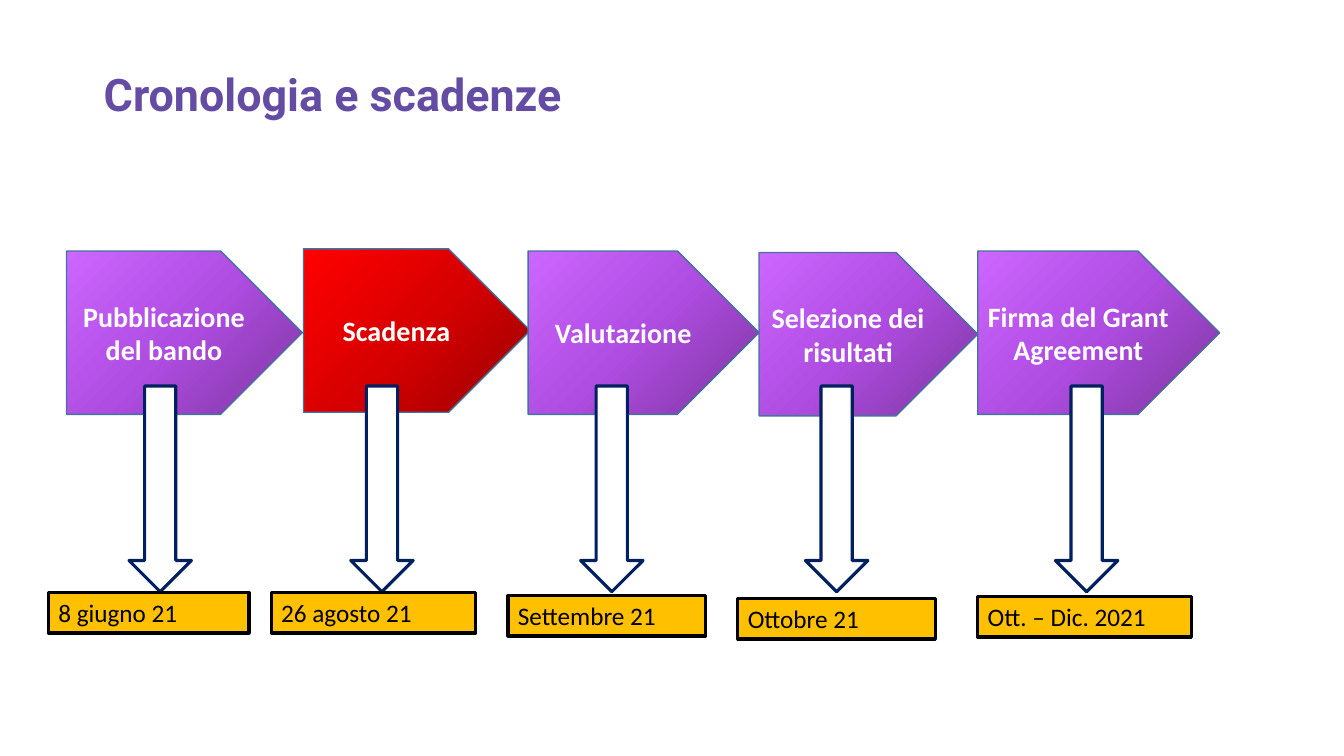
import copy

import pptx
import pptx.dml.color
import pptx.enum.shapes
import pptx.enum.text
import pptx.util

SHAPE = pptx.enum.shapes.MSO_SHAPE
ANCHOR = pptx.enum.text.MSO_ANCHOR
ALIGN = pptx.enum.text.PP_ALIGN
WIDTH, HEIGHT = pptx.util.Inches(13.33), pptx.util.Inches(7.5)
COLORS = {
    "title": "644BA4", "white": "FFFFFF", "black": "000000",
    "stage_line": "43739E", "arrow_line": "002060", "date": "FFC000",
}
GRADIENTS = {
    "purple": ("7B369E", "AF4CE1", "CC66FF"),
    "red": ("970000", "D70000", "FF0000"),
}
STAGE_HEIGHT, DATE_HEIGHT = 21.6, 5.33
ARROW_TOP, ARROW_WIDTH, ARROW_HEIGHT = 51.07, 4.65, 27.2
STAGES = [
    ("Pubblicazione del bando", "purple", (4.95, 33.2, 17.55)),
    ("Scadenza", "red", (22.58, 32.93, 16.88)),
    ("Valutazione", "purple", (39.3, 33.2, 17.18)),
    ("Selezione dei risultati", "purple", (56.48, 33.4, 16.28)),
    ("Firma del Grant Agreement", "purple", (72.75, 33.2, 18)),
]
DATES = [
    ("8 giugno 21", 9.6, (3.6, 78.4, 14.93)),
    ("26 agosto 21", 26.1, (20.18, 78.4, 15.23)),
    ("Settembre 21", 43.2, (37.8, 78.8, 14.7)),
    ("Ottobre 21", 59.93, (54.9, 79.2, 14.7)),
    ("Ott. – Dic. 2021", 78.53, (72.75, 78.93, 15.9)),
]


def rgb(value):
    """Return the colour of a hex string."""
    return pptx.dml.color.RGBColor.from_string(value)


def place(left, top, width, height):
    """Turn percentages of the slide into lengths."""
    return [round(share * side / 100) for share, side in
            ((left, WIDTH), (top, HEIGHT), (width, WIDTH), (height, HEIGHT))]


def write(sp, text, size, color, font="Calibri", bold=False,
          align=ALIGN.LEFT, anchor=ANCHOR.TOP):
    """Fill a shape with one formatted paragraph."""
    tf = sp.text_frame
    tf.word_wrap = True
    tf.vertical_anchor = anchor
    tf.text = text
    p = tf.paragraphs[0]
    p.alignment = align
    f = p.runs[0].font
    f.name, f.size, f.bold = font, pptx.util.Pt(size), bold
    f.color.rgb = rgb(COLORS[color])


def add_outlined(s, kind, box, line, weight, fill=None):
    """Add a preset shape with an outline and an optional solid fill."""
    sp = s.shapes.add_shape(kind, *place(*box))
    sp.shadow.inherit = False
    sp.line.color.rgb = rgb(COLORS[line])
    sp.line.width = pptx.util.Pt(weight)
    if fill:
        sp.fill.solid()
        sp.fill.fore_color.rgb = rgb(COLORS[fill])
    return sp


def shade(sp, colors):
    """Give a shape a diagonal gradient of three evenly spaced colours."""
    sp.fill.gradient()
    sp.fill.gradient_angle = 135
    stops = sp._element.spPr.find(".//" + pptx.oxml.ns.qn("a:gsLst"))
    stops.insert(1, copy.deepcopy(stops[0]))
    for i, (stop, color) in enumerate(zip(sp.fill.gradient_stops, colors)):
        stop.position = i / 2
        stop.color.rgb = rgb(color)


def add_title(s, text):
    """Add the slide heading."""
    sp = s.shapes.add_textbox(*place(6.98, 8, 89.7, 8.67))
    write(sp, text, 32, "title", "Roboto", True, anchor=ANCHOR.BOTTOM)
    sp.text_frame.paragraphs[0].line_spacing = 0.9


def add_stage(s, text, gradient, box):
    """Add one pentagon of the process."""
    sp = add_outlined(s, SHAPE.PENTAGON, (*box, STAGE_HEIGHT), "stage_line", 1)
    shade(sp, GRADIENTS[gradient])
    write(sp, text, 20, "white", bold=True, align=ALIGN.CENTER,
          anchor=ANCHOR.MIDDLE)


def add_date(s, text, arrow_left, box):
    """Add a down arrow and the date box below it."""
    arrow = (arrow_left, ARROW_TOP, ARROW_WIDTH, ARROW_HEIGHT)
    add_outlined(s, SHAPE.DOWN_ARROW, arrow, "arrow_line", 2.25, "white")
    sp = add_outlined(s, SHAPE.RECTANGLE, (*box, DATE_HEIGHT), "black", 2.25,
                      "date")
    write(sp, text, 18, "black")
    sp.text_frame.auto_size = pptx.enum.text.MSO_AUTO_SIZE.SHAPE_TO_FIT_TEXT


def main():
    """Build the timeline slide and save it."""
    prs = pptx.Presentation()
    prs.slide_width, prs.slide_height = WIDTH, HEIGHT
    s = prs.slides.add_slide(prs.slide_layouts[6])
    add_title(s, "Cronologia e scadenze")
    for stage in STAGES:
        add_stage(s, *stage)
    for date in DATES:
        add_date(s, *date)
    prs.save("out.pptx")


if __name__ == "__main__":
    main()
